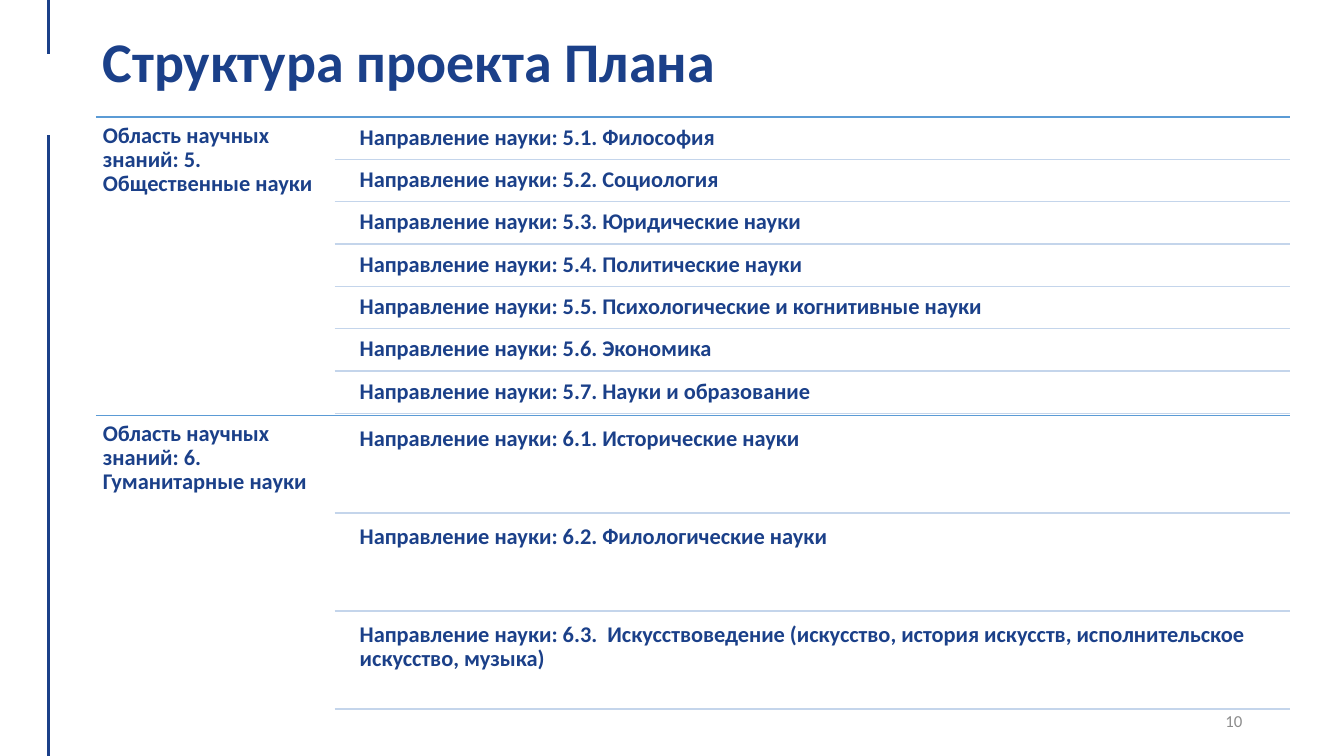
from lxml import etree
from pptx import Presentation
from pptx.dml.color import RGBColor
from pptx.enum import shapes, text
from pptx.oxml.ns import qn
from pptx.util import Inches, Pt

NAVY = RGBColor(0x1B, 0x40, 0x89)
BLUE = RGBColor(0x5B, 0x9B, 0xD5)
PALE_BLUE = RGBColor(0xC4, 0xD5, 0xEB)
GRAY = RGBColor(0x8C, 0x8C, 0x8C)

FIELDS = [
    ("Область научных знаний: 5. Общественные науки", [
        "5.1. Философия",
        "5.2. Социология",
        "5.3. Юридические науки",
        "5.4. Политические науки",
        "5.5. Психологические и когнитивные науки",
        "5.6. Экономика",
        "5.7. Науки и образование",
    ]),
    ("Область научных знаний: 6. Гуманитарные науки", [
        "6.1. Исторические науки",
        "6.2. Филологические науки",
        "6.3.  Искусствоведение (искусство, история искусств, "
        "исполнительское искусство, музыка)",
    ]),
]


def write_text(shape, wording, size=16, color=NAVY, bold=True, spacing=0.9,
               align=text.PP_ALIGN.LEFT, anchor=text.MSO_ANCHOR.TOP, inset=None):
    frame = shape.text_frame
    frame.word_wrap = True
    frame.auto_size = text.MSO_AUTO_SIZE.NONE
    frame.vertical_anchor = anchor
    if inset is not None:
        frame.margin_left = frame.margin_right = Inches(inset)
        frame.margin_top = frame.margin_bottom = Inches(inset)
    paragraph = frame.paragraphs[0]
    paragraph.alignment = align
    paragraph.line_spacing = spacing
    run = paragraph.add_run()
    run.text = wording
    run.font.name = "Calibri"
    run.font.size = Pt(size)
    run.font.bold = bold
    run.font.color.rgb = color


def add_text(slide, wording, left, top, width, height, **text_format):
    box = slide.shapes.add_textbox(Inches(left), Inches(top), Inches(width), Inches(height))
    write_text(box, wording, **text_format)


def add_line(slide, x1, y1, x2, y2, color, width=1):
    line = slide.shapes.add_connector(
        shapes.MSO_CONNECTOR.STRAIGHT, Inches(x1), Inches(y1), Inches(x2), Inches(y2))
    line.line.color.rgb = color
    line.line.width = Pt(width)
    etree.SubElement(line._element.spPr, qn("a:effectLst"))


def add_side_rule(slide, x, gap_top, gap_bottom, bottom):
    add_line(slide, x, gap_bottom, x, bottom, NAVY, 2)
    add_line(slide, x, 0, x, gap_top, NAVY, 2)


def add_title(slide, wording, left, top, width, height):
    title = slide.shapes.title
    title.left, title.top = Inches(left), Inches(top)
    title.width, title.height = Inches(width), Inches(height)
    write_text(title, wording, size=40, anchor=text.MSO_ANCHOR.MIDDLE)


def add_field(slide, heading, directions, left, top, width, height):
    """Heading in the left fifth; underlined rows with gaps of 5% of a row."""
    right = left + width
    rows_left = left + width / 5
    text_left = rows_left + 0.18
    count = len(directions)
    row_height = height / (count + 0.05 * (count + 1))
    gap = 0.05 * row_height

    add_line(slide, left, top, right, top, BLUE)
    add_text(slide, heading, left, top, width / 5, height, inset=0.07)
    for index, direction in enumerate(directions):
        row_top = top + gap + index * (row_height + gap)
        row_bottom = row_top + row_height
        add_text(slide, f"Направление науки: {direction}", text_left, row_top,
                 right - text_left, row_height, inset=0.07)
        add_line(slide, rows_left, row_bottom, right, row_bottom, PALE_BLUE)


def main():
    presentation = Presentation()
    presentation.slide_width = Inches(13.33)
    presentation.slide_height = Inches(7.5)
    slide = presentation.slides.add_slide(presentation.slide_layouts[5])

    add_side_rule(slide, 0.48, 0.54, 1.34, 7.5)
    add_title(slide, "Структура проекта Плана", 0.92, 0.16, 12.1, 0.95)
    add_text(slide, "10", 9.42, 6.95, 3, 0.4, size=12, color=GRAY, bold=False,
             spacing=1.0, align=text.PP_ALIGN.RIGHT, anchor=text.MSO_ANCHOR.MIDDLE)
    field_height = 2.96
    for index, (heading, directions) in enumerate(FIELDS):
        add_field(slide, heading, directions, 0.95, 1.16 + index * field_height,
                  11.84, field_height)
    presentation.save("out.pptx")


if __name__ == "__main__":
    main()
